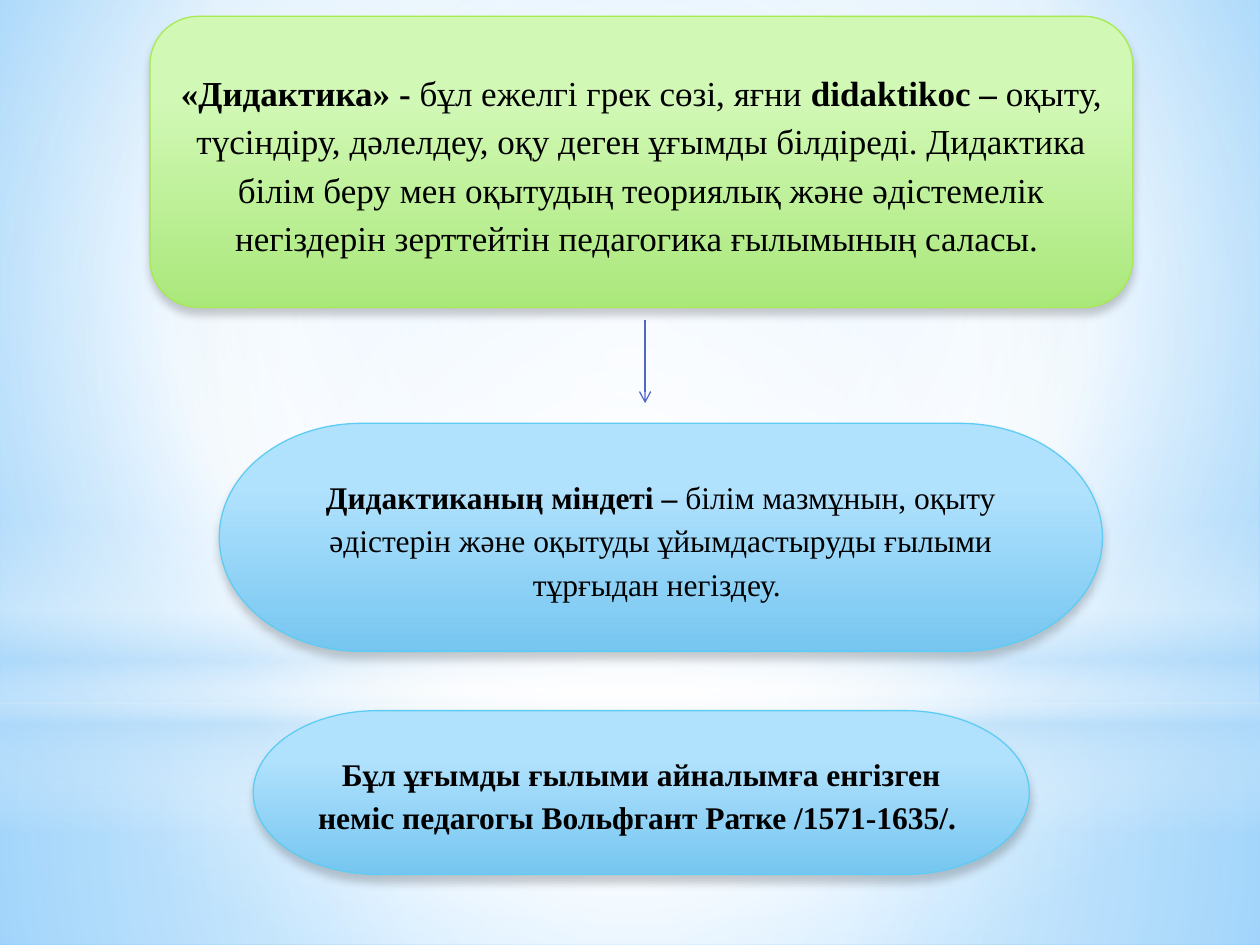
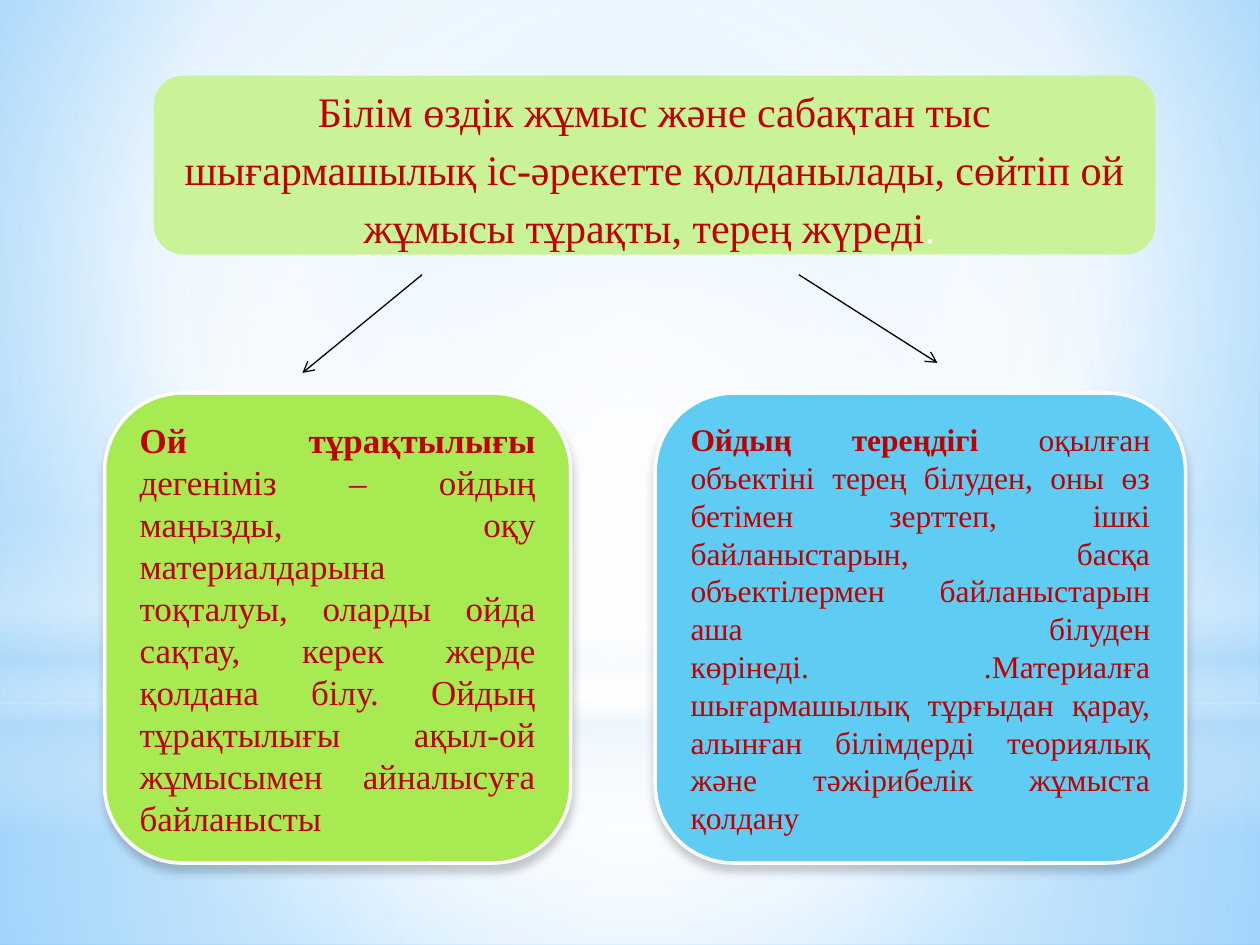
from lxml.etree import SubElement
from pptx import Presentation
from pptx.dml.color import RGBColor
from pptx.enum.shapes import MSO_CONNECTOR, MSO_SHAPE
from pptx.enum.text import MSO_ANCHOR, PP_ALIGN
from pptx.oxml.ns import qn
from pptx.util import Inches, Pt

# Shared style
FONT = "Times New Roman"
BLACK, WHITE, RED = "000000", "FFFFFF", "C00000"
GREEN, SKY, INDIGO, PALE_GREEN = "A7EA52", "5ECCF3", "4E67C8", "CAF297"
HAZE = "B4DCFA"
CENTER = (50, 50, 50, 50)
GREEN_FADE = [(28, "D1F8B5"), (100, "AAE87B")]
SKY_FADE = [(28, "B1E2FD"), (100, "76C6F1")]


def color(value):
    return RGBColor.from_string(value)


def add_color(parent, value, opacity=100):
    element = SubElement(parent, qn("a:srgbClr"), val=value)
    if opacity < 100:
        SubElement(element, qn("a:alpha"), val=str(opacity * 1000))


def set_gradient(fill, holder, stops, focus=None):
    """Fade from top to bottom, or outwards from the focus rectangle."""
    fill.gradient()
    gradient = holder.find(".//" + qn("a:gradFill"))
    for child in list(gradient):
        gradient.remove(child)
    stop_list = SubElement(gradient, qn("a:gsLst"))
    for position, *tint in stops:
        stop = SubElement(stop_list, qn("a:gs"), pos=str(position * 1000))
        add_color(stop, *tint)
    if focus:
        ring = SubElement(gradient, qn("a:path"), path="circle")
        sides = {side: str(part * 1000) for side, part in zip("ltrb", focus)}
        SubElement(ring, qn("a:fillToRect"), **sides)
    else:
        SubElement(gradient, qn("a:lin"), ang="5400000", scaled="0")


class Deck:
    def __init__(self):
        self.deck = Presentation()
        self.deck.slide_width, self.deck.slide_height = Inches(10), Inches(7.5)
        self.layout = self.deck.slide_layouts[6]
        self.new_page()
        self.backdrop()

    def new_page(self):
        self.page = self.deck.slides.add_slide(self.layout)

    def backdrop(self):
        """Put the blue glow and horizon on the layout that all pages share."""
        layout = self.layout
        for placeholder in list(layout.placeholders):
            layout.shapes.element.remove(placeholder.element)
        set_gradient(layout.background.fill, layout.element,
                     [(0, "9ED5FF"), (60, WHITE), (100, "5BB9FF")], (20, 10, 20, 60))
        rectangle = MSO_SHAPE.RECTANGLE
        layers = [
            (rectangle, 5.58, 1.92,
             [(0, WHITE, 91), (37, WHITE, 76), (100, HAZE, 79)], CENTER),
            (rectangle, 0, 5.58,
             [(0, WHITE, 89), (48, WHITE, 62), (100, HAZE, 79)], CENTER),
            (rectangle, 4.12, 2.5,
             [(0, WHITE, 0), (29, WHITE, 30), (45, HAZE, 40),
              (55, WHITE, 26), (65, HAZE, 60), (100, WHITE, 0)], None),
            (MSO_SHAPE.OVAL, 1.75, 5.58, [(0, WHITE), (56, WHITE, 0)], CENTER),
        ]
        for kind, top, height, stops, focus in layers:
            layer = self.shape(kind, (0, top, 10, height), stops, focus=focus)
            layout.shapes.element.append(layer.element)

    def shape(self, kind, place, fill, line=None, width=0.75, focus=None):
        shape = self.page.shapes.add_shape(kind, *map(Inches, place))
        if isinstance(fill, str):
            shape.fill.solid()
            shape.fill.fore_color.rgb = color(fill)
        else:
            set_gradient(shape.fill, shape.element.spPr, fill, focus)
        if line:
            shape.line.color.rgb = color(line)
            shape.line.width = Pt(width)
        else:
            shape.line.fill.background()
        shape.shadow.inherit = False
        return shape

    def soft_shadow(self, shape):
        effects = shape.element.spPr.find(qn("a:effectLst"))
        shadow = SubElement(effects, qn("a:outerShdw"), blurRad=str(Pt(5)),
                            dist=str(Pt(4)), dir="5400000", rotWithShape="0")
        add_color(shadow, BLACK, 20)

    def add_text(self, shape, spans, size, ink=BLACK, align=PP_ALIGN.CENTER,
                 spacing=1.15, after=0):
        """Each span is its text, whether it is bold, and its own ink if any."""
        frame = shape.text_frame
        frame.word_wrap = True
        frame.vertical_anchor = MSO_ANCHOR.MIDDLE
        para = frame.paragraphs[0]
        para.alignment, para.line_spacing = align, spacing
        para.space_after = Pt(after)
        for text, bold, *own_ink in spans:
            span = para.add_run()
            span.text = text
            span.font.name, span.font.size, span.font.bold = FONT, Pt(size), bold
            span.font.color.rgb = color(own_ink[0] if own_ink else ink)

    def definition(self, kind, place, fade, line, size, spans):
        box = self.shape(kind, place, fade, line)
        self.soft_shadow(box)
        self.add_text(box, spans, size, after=10)

    def card(self, left, width, fill, size, spans):
        box = self.shape(MSO_SHAPE.ROUNDED_RECTANGLE, (left, 3.12, width, 3.73),
                         fill, WHITE, 2)
        self.soft_shadow(box)
        self.add_text(box, spans, size, RED, PP_ALIGN.JUSTIFY, spacing=1.0)

    def arrow(self, start, end, ink):
        arrow = self.page.shapes.add_connector(
            MSO_CONNECTOR.STRAIGHT, *map(Inches, start + end))
        arrow.line.color.rgb = color(ink)
        arrow.line.width = Pt(0.75)
        properties = arrow.element.spPr
        SubElement(properties.find(qn("a:ln")), qn("a:tailEnd"), type="arrow")
        SubElement(properties, qn("a:effectLst"))


def didactics_page(deck):
    # Meaning of the word
    deck.definition(MSO_SHAPE.ROUNDED_RECTANGLE, (1.19, 0.13, 7.8, 2.31),
                    GREEN_FADE, GREEN, 20, [
        ("«Дидактика» - ", True),
        ("бұл ежелгі грек сөзі, яғни ", False),
        ("didaktikоc – ", True),
        ("оқыту, түсіндіру, дәлелдеу, оқу деген ұғымды білдіреді. Дидактика "
         "білім беру мен оқытудың теориялық және әдістемелік негіздерін "
         "зерттейтін педагогика ғылымының саласы. ", False)])
    # Task and author of the term
    deck.definition(MSO_SHAPE.FLOWCHART_TERMINATOR, (1.74, 3.36, 7.01, 1.81),
                    SKY_FADE, SKY, 18, [
        ("Дидактиканың міндеті – ", True),
        ("білім мазмұнын, оқыту әдістерін және оқытуды ұйымдастыруды "
         "ғылыми тұрғыдан негіздеу. ", False)])
    deck.arrow((5.12, 2.54), (5.12, 3.2), INDIGO)
    deck.definition(MSO_SHAPE.FLOWCHART_TERMINATOR, (2.01, 5.64, 6.16, 1.3),
                    SKY_FADE, SKY, 18, [
        ("Бұл ұғымды ғылыми айналымға енгізген неміс педагогы "
         "Вольфгант Ратке /1571-1635/. ", True)])


def thinking_page(deck):
    # Heading
    heading = deck.shape(MSO_SHAPE.FLOWCHART_ALTERNATE_PROCESS,
                         (1.22, 0.6, 7.95, 1.42), PALE_GREEN)
    deck.add_text(heading, [
        ("Білім өздік жұмыс және сабақтан тыс шығармашылық іс-әрекетте "
         "қолданылады, сөйтіп ой жұмысы тұрақты, терең жүреді", False),
        (". ", False, WHITE)], 24, RED)
    # Branches
    deck.arrow((3.35, 2.18), (2.4, 2.96), BLACK)
    deck.arrow((6.34, 2.18), (7.44, 2.88), BLACK)
    # Two qualities of thinking
    deck.card(0.83, 3.7, GREEN, 20, [
        ("Ой тұрақтылығы ", True),
        ("дегеніміз – ойдың маңызды, оқу материалдарына тоқталуы, оларды "
         "ойда сақтау, керек жерде қолдана білу. Ойдың тұрақтылығы ақыл-ой "
         "жұмысымен айналысуға байланысты", False)])
    deck.card(5.2, 4.21, SKY, 18, [
        ("Ойдың тереңдігі ", True),
        ("оқылған объектіні терең білуден, оны өз бетімен зерттеп, ішкі "
         "байланыстарын, басқа объектілермен байланыстарын аша білуден "
         "көрінеді. .Материалға шығармашылық тұрғыдан қарау, алынған "
         "білімдерді теориялық және тәжірибелік жұмыста қолдану", False)])


def main():
    deck = Deck()
    didactics_page(deck)
    deck.new_page()
    thinking_page(deck)
    deck.deck.save("out.pptx")


if __name__ == "__main__":
    main()
